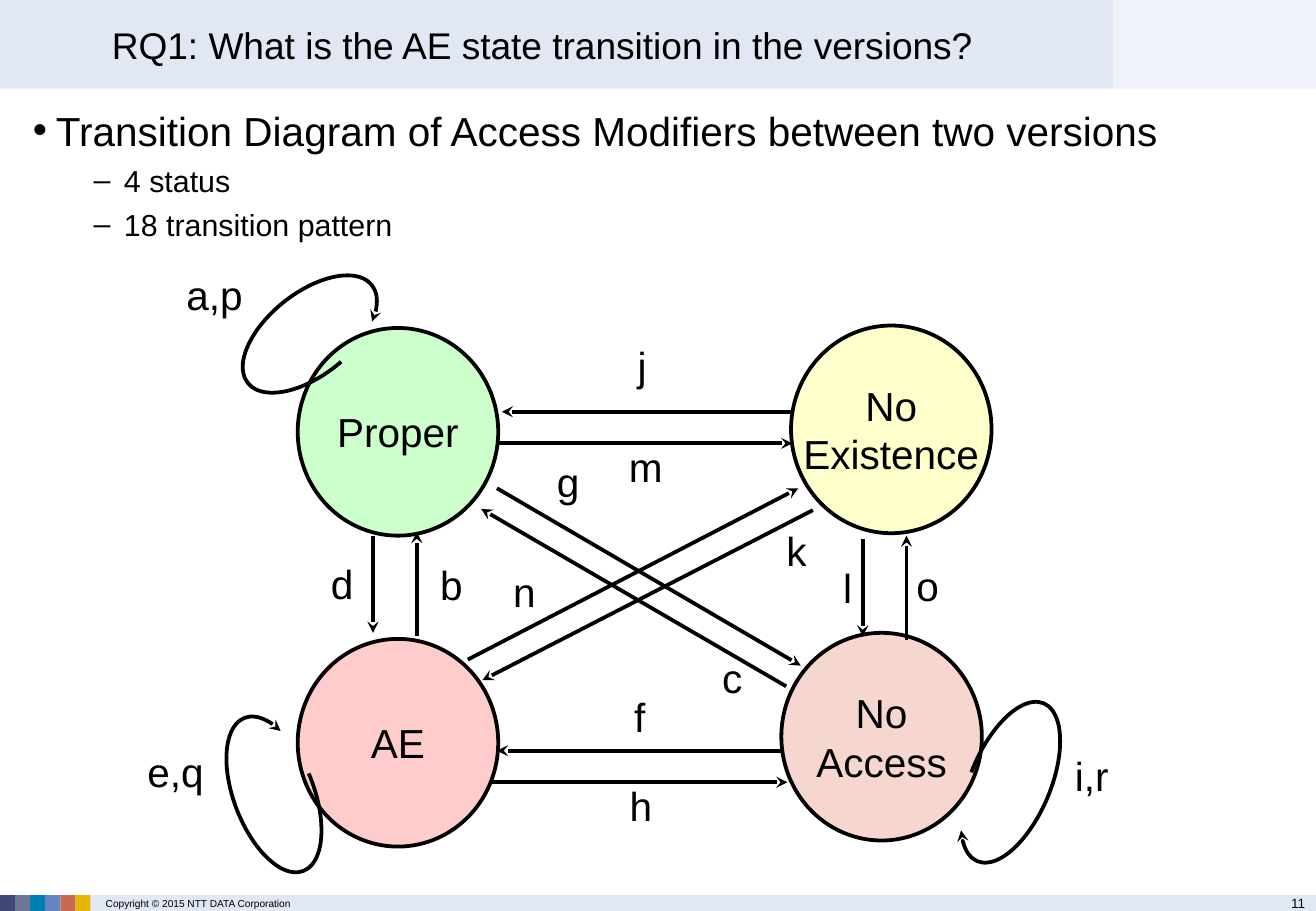
"""Build the slide with the state transition diagram of access modifiers."""
from lxml import etree
from pptx import Presentation
from pptx import util as u
from pptx.dml.color import RGBColor
from pptx.enum import shapes, text
from pptx.oxml import ns

WIDTH, HEIGHT = 10.83, 7.5
BLACK, BAND = "000000", "E1E7F3"
HEADER, FOOTER = 0.73, 0.13
SWATCH = 0.124
CIRCLE = (1.65, 1.71)

TITLE = "RQ1: What is the AE state transition in the versions?"
BULLETS = [
    (0, "Transition Diagram of Access Modifiers between two versions"),
    (1, "4 status"),
    (1, "18 transition pattern"),
]
LEVELS = [(24, 0.19, -0.19), (18, 0.75, -0.25)]
SWATCHES = ["3F4973", "6F7796", "0080B1", "6785C1", "C96953", "E6B600"]
FOOTER_TEXTS = [
    ("Copyright © 2015 NTT DATA Corporation", (0.78, 7.39, 2.39, 0.1), 6, text.PP_ALIGN.LEFT),
    ("11", (10.14, 7.37, 0.69, 0.13), 8, text.PP_ALIGN.RIGHT),
]
STATES = [
    (["Proper"], (2.45, 2.7), "CCFFCC"),
    (["No", "Access"], (6.43, 5.21), "F5D7D0"),
    (["AE"], (2.45, 5.26), "FFCCCC"),
    (["No", "Existence"], (6.51, 2.68), "FFFFCC"),
]
LOOPS = [
    ((1.58, 6.21, 1.35, 0.66), 249.1, (79.77, 26.93)),
    ((7.61, 6.11, 1.41, 0.66), 112.8, (81.46, 23)),
    ((1.9, 2.41, 1.3, 0.68), 321.7, (79.77, 26.93)),
]
ARROWS_BEHIND = [
    ((3.07, 4.41), (3.07, 5.21)),
    ((3.43, 5.24), (3.43, 4.38)),
    ((6.47, 6.18), (4.09, 6.18)),
    ((4.05, 6.44), (6.48, 6.44)),
]
ARROWS_FRONT = [
    ((4.09, 4.02), (6.59, 5.48)),
    ((6.47, 5.65), (3.96, 4.19)),
    ((7.1, 4.44), (7.1, 5.24)),
    ((7.46, 5.27), (7.46, 4.41)),
    ((6.51, 3.39), (4.13, 3.39)),
    ((4.09, 3.65), (6.52, 3.65)),
    ((3.85, 5.43), (6.57, 4.02)),
    ((6.69, 4.2), (3.97, 5.6)),
]
LABELS = [
    ("a,p", 1.29, 2.17), ("b", 3.43, 4.56), ("c", 5.74, 5.33), ("d", 2.53, 4.55),
    ("e,q", 0.97, 6.1), ("f", 4.98, 5.65), ("g", 4.39, 3.71), ("h", 4.99, 6.38),
    ("i,r", 8.51, 6.13), ("o", 7.35, 4.57), ("l", 6.69, 4.59), ("j", 5, 2.76),
    ("m", 5.03, 3.59), ("k", 6.27, 4.28), ("n", 4.03, 4.62),
]


def color(value):
    return RGBColor.from_string(value)


def inches(values):
    return [u.Inches(value) for value in values]


def child(parent, tag, **attributes):
    return etree.SubElement(parent, ns.qn(tag), attributes)


def set_margins(frame, side, top):
    frame.margin_left = frame.margin_right = u.Inches(side)
    frame.margin_top = frame.margin_bottom = u.Inches(top)


def add_run(paragraph, words, size):
    run = paragraph.add_run()
    run.text = words
    run.font.name = "Arial"
    run.font.size = u.Pt(size)
    run.font.color.rgb = color(BLACK)


def add_lines(frame, lines, size, align):
    for index, line in enumerate(lines):
        paragraph = frame.add_paragraph() if index else frame.paragraphs[0]
        paragraph.alignment = align
        add_run(paragraph, line, size)


def add_shape(slide, kind, box, fill=None, outlined=False):
    shape = slide.shapes.add_shape(kind, *inches(box))
    shape.shadow.inherit = False
    if fill:
        shape.fill.solid()
        shape.fill.fore_color.rgb = color(fill)
    else:
        shape.fill.background()
    if outlined:
        set_line(shape)
    else:
        shape.line.fill.background()
    return shape


def set_line(shape):
    shape.line.color.rgb = color(BLACK)
    shape.line.width = u.Pt(2.25)


def add_arrowhead(shape):
    child(shape.line._get_or_add_ln(), "a:tailEnd", type="stealth")


def add_textbox(slide, lines, box, size, align, side=0.1, top=0.05):
    frame = slide.shapes.add_textbox(*inches(box)).text_frame
    frame.word_wrap = True
    set_margins(frame, side, top)
    add_lines(frame, lines, size, align)


def add_arrows(slide, arrows):
    for start, end in arrows:
        connector = slide.shapes.add_connector(
            shapes.MSO_CONNECTOR.STRAIGHT, *inches(start + end))
        set_line(connector)
        add_arrowhead(connector)
        child(connector._element.spPr, "a:effectLst")


def add_bands(slide):
    rectangle = shapes.MSO_SHAPE.RECTANGLE
    add_shape(slide, rectangle, (0, 0, 9.16, HEADER), BAND)
    corner = add_shape(slide, rectangle, (9.16, 0, WIDTH - 9.16, HEADER), BAND)
    tint = corner._element.spPr.find(".//" + ns.qn("a:srgbClr"))
    child(tint, "a:alpha", val="50000")
    top = HEIGHT - FOOTER
    add_shape(slide, rectangle, (0, top, WIDTH, FOOTER), BAND)
    for index, swatch in enumerate(SWATCHES):
        add_shape(slide, rectangle, (index * SWATCH, top, SWATCH, FOOTER), swatch)
    for words, box, size, align in FOOTER_TEXTS:
        add_textbox(slide, [words], box, size, align, 0.09, 0)


def place(placeholder, box, anchor):
    placeholder.left, placeholder.top, placeholder.width, placeholder.height = inches(box)
    frame = placeholder.text_frame
    frame.auto_size = text.MSO_AUTO_SIZE.NONE
    frame.vertical_anchor = anchor
    return frame


def fill_placeholders(slide):
    title = place(slide.shapes.title, (0.74, 0, 8.34, HEADER), text.MSO_ANCHOR.MIDDLE)
    set_margins(title, 0.18, 0.05)
    add_lines(title, [TITLE], 22, text.PP_ALIGN.LEFT)
    body = place(slide.placeholders[1], (0.17, 0.78, 10.15, 1.39), text.MSO_ANCHOR.TOP)
    set_margins(body, 0.1, 0.09)
    for index, (level, words) in enumerate(BULLETS):
        paragraph = body.add_paragraph() if index else body.paragraphs[0]
        size, margin, indent = LEVELS[level]
        paragraph.level = level
        properties = paragraph._p.get_or_add_pPr()
        properties.set("marL", str(u.Inches(margin)))
        properties.set("indent", str(u.Inches(indent)))
        paragraph.space_before = u.Pt(4.5 if index else 0)
        add_run(paragraph, words, size)


def add_diagram(slide):
    center = text.PP_ALIGN.CENTER
    add_arrows(slide, ARROWS_BEHIND)
    for lines, corner, fill in STATES:
        state = add_shape(slide, shapes.MSO_SHAPE.OVAL, corner + CIRCLE, fill, True)
        frame = state.text_frame
        set_margins(frame, 0, 0)
        frame.word_wrap = False
        frame.vertical_anchor = text.MSO_ANCHOR.MIDDLE
        add_lines(frame, lines, 24, center)
    for box, rotation, angles in LOOPS:
        loop = add_shape(slide, shapes.MSO_SHAPE.ARC, box, outlined=True)
        loop.rotation = rotation
        for index, angle in enumerate(angles):
            loop.adjustments[index] = angle * 0.6
        add_arrowhead(loop)
    add_arrows(slide, ARROWS_FRONT)
    for words, left, top in LABELS:
        width = 0.57 if len(words) == 1 else 0.95
        add_textbox(slide, [words], (left, top, width, 0.7), 24, center)


def main():
    presentation = Presentation()
    presentation.slide_width, presentation.slide_height = inches((WIDTH, HEIGHT))
    slide = presentation.slides.add_slide(presentation.slide_layouts[1])
    add_bands(slide)
    title, body = slide.shapes.title, slide.placeholders[1]
    for placeholder in (title, body):
        slide.shapes._spTree.append(placeholder._element)
    fill_placeholders(slide)
    add_diagram(slide)
    presentation.save("out.pptx")


if __name__ == "__main__":
    main()
